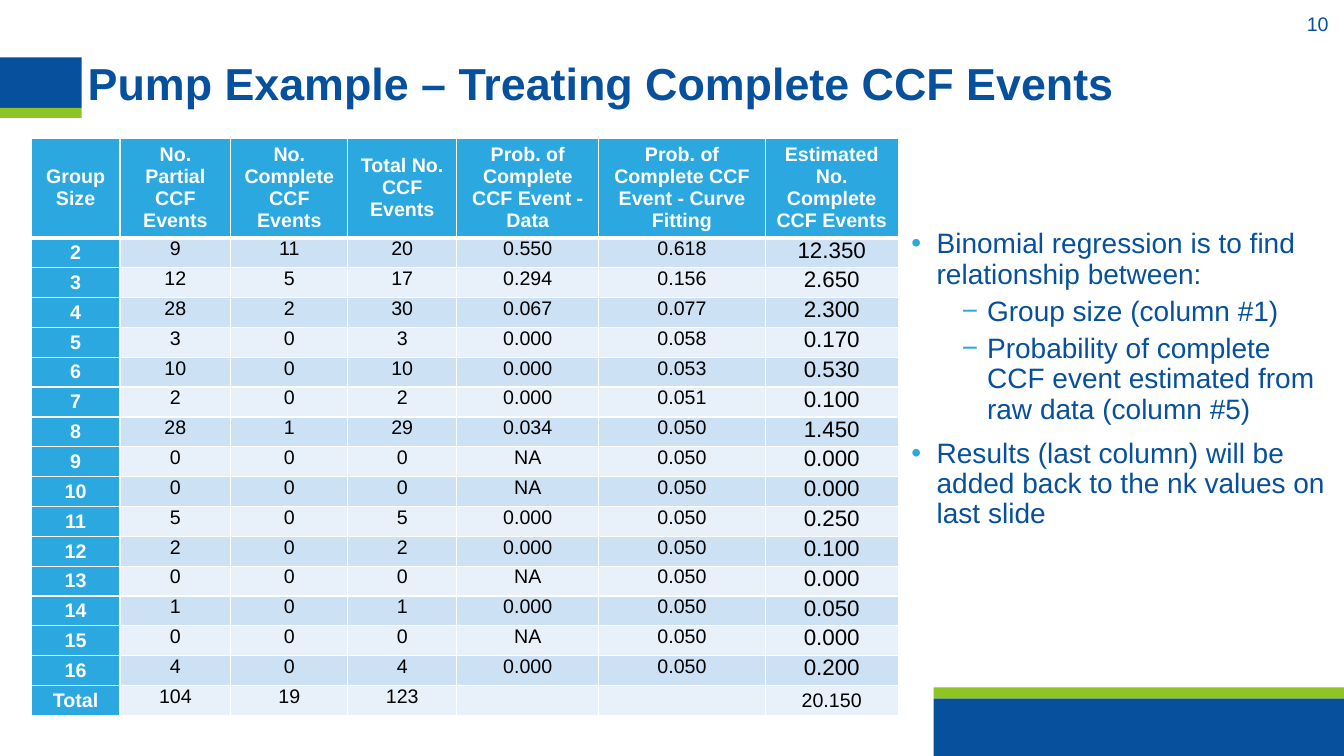
"""Build the slide on treating complete CCF events in the pump example."""
from dataclasses import dataclass

from lxml import etree
from pptx import Presentation
from pptx import util as u
from pptx.dml.color import RGBColor
from pptx.enum import shapes, text
from pptx.oxml.ns import qn


@dataclass(frozen=True)
class Theme:
    """Colours, font and type sizes of the slide."""
    navy: str = "06509D"
    green: str = "8EC423"
    sky: str = "2CA8E1"
    bands: tuple = ("CDE1F4", "E8F1F9")
    white: str = "FFFFFF"
    black: str = "000000"
    font: str = "Arial"
    title: int = 32
    bullet: int = 20
    estimate: int = 16
    small: int = 14


HEADINGS = (
    "Group Size", "No. Partial CCF Events", "No. Complete CCF Events",
    "Total No. CCF Events", "Prob. of Complete CCF Event - Data",
    "Prob. of Complete CCF Event - Curve Fitting",
    "Estimated No. Complete CCF Events",
)
EVENTS = (
    ("2", "9", "11", "20", "0.550", "0.618", "12.350"),
    ("3", "12", "5", "17", "0.294", "0.156", "2.650"),
    ("4", "28", "2", "30", "0.067", "0.077", "2.300"),
    ("5", "3", "0", "3", "0.000", "0.058", "0.170"),
    ("6", "10", "0", "10", "0.000", "0.053", "0.530"),
    ("7", "2", "0", "2", "0.000", "0.051", "0.100"),
    ("8", "28", "1", "29", "0.034", "0.050", "1.450"),
    ("9", "0", "0", "0", "NA", "0.050", "0.000"),
    ("10", "0", "0", "0", "NA", "0.050", "0.000"),
    ("11", "5", "0", "5", "0.000", "0.050", "0.250"),
    ("12", "2", "0", "2", "0.000", "0.050", "0.100"),
    ("13", "0", "0", "0", "NA", "0.050", "0.000"),
    ("14", "1", "0", "1", "0.000", "0.050", "0.050"),
    ("15", "0", "0", "0", "NA", "0.050", "0.000"),
    ("16", "4", "0", "4", "0.000", "0.050", "0.200"),
    ("Total", "104", "19", "123", "", "", "20.150"),
)
COLUMN_WIDTHS = (0.88, 1.1, 1.16, 1.08, 1.41, 1.65, 1.32)
HEADER_HEIGHT, BODY_HEIGHT = 0.99, 4.74
FINDINGS = (
    (0, "Binomial regression is to find relationship between:"),
    (1, "Group size (column #1)"),
    (1, "Probability of complete CCF event estimated from raw data (column #5)"),
    (0, "Results (last column) will be added back to the nk values on last slide"),
)
BULLET_LEVELS = (("•", 0.25, 10), ("−", 0.75, 5))


class SlideBuilder:
    """Draw styled elements on one slide."""

    def __init__(self, slide, theme):
        self.slide = slide
        self.theme = theme

    def bar(self, box, color):
        """Add a plain coloured bar."""
        bar = self.slide.shapes.add_shape(
            shapes.MSO_SHAPE.RECTANGLE, *map(u.Inches, box))
        bar.shadow.inherit = False
        bar.fill.solid()
        bar.fill.fore_color.rgb = RGBColor.from_string(color)
        bar.line.fill.background()

    def style(self, paragraph, size, color, bold=False):
        """Format the runs of a paragraph."""
        for run in paragraph.runs:
            run.font.name = self.theme.font
            run.font.size = u.Pt(size)
            run.font.bold = bold
            run.font.color.rgb = RGBColor.from_string(color)

    def frame(self, box, insets):
        """Add a wrapping text box and return its text frame."""
        frame = self.slide.shapes.add_textbox(*map(u.Inches, box)).text_frame
        frame.word_wrap = True
        (frame.margin_left, frame.margin_top,
         frame.margin_right, frame.margin_bottom) = map(u.Inches, insets)
        return frame

    def title(self, box, wording):
        """Add the slide title."""
        frame = self.frame(box, (0, 0, 0.1, 0.05))
        frame.text = wording
        frame.paragraphs[0].line_spacing = 0.9
        self.style(frame.paragraphs[0], self.theme.title, self.theme.navy, True)

    def page_number(self, box, number):
        """Add the page number."""
        frame = self.frame(box, (0.1, 0.05, 0.1, 0.17))
        frame.vertical_anchor = text.MSO_ANCHOR.MIDDLE
        frame.text = number
        frame.paragraphs[0].alignment = text.PP_ALIGN.CENTER
        self.style(frame.paragraphs[0], self.theme.small, self.theme.navy)

    def bullets(self, box, items):
        """Add a two-level bullet list."""
        frame = self.frame(box, (0, 0, 0.1, 0.05))
        frame.text = "\n".join(wording for _, wording in items)
        for index, (paragraph, (level, _)) in enumerate(zip(frame.paragraphs, items)):
            mark, indent, space = BULLET_LEVELS[level]
            paragraph.level = level
            paragraph.line_spacing = 0.9
            if index:
                paragraph.space_before = u.Pt(space)
            props = paragraph._p.get_or_add_pPr()
            props.set("marL", str(u.Inches(indent)))
            props.set("indent", str(u.Inches(-0.25)))
            color = etree.SubElement(props, qn("a:buClr"))
            etree.SubElement(color, qn("a:srgbClr"), val=self.theme.sky)
            etree.SubElement(props, qn("a:buFont"), typeface=self.theme.font)
            etree.SubElement(props, qn("a:buChar"), char=mark)
            self.style(paragraph, self.theme.bullet, self.theme.navy)

    def borders(self, cell, top, bottom):
        """Give a cell white borders."""
        props = cell._tc.get_or_add_tcPr()
        sides = (("a:lnL", 1), ("a:lnR", 1), ("a:lnT", top), ("a:lnB", bottom))
        for position, (side, width) in enumerate(sides):
            line = etree.Element(qn(side), w=str(u.Pt(width)))
            fill = etree.SubElement(line, qn("a:solidFill"))
            etree.SubElement(fill, qn("a:srgbClr"), val=self.theme.white)
            props.insert(position, line)

    def cell(self, cell, wording, fill, color, size, bold, middle):
        """Fill and format one table cell."""
        cell.fill.solid()
        cell.fill.fore_color.rgb = RGBColor.from_string(fill)
        cell.margin_left = cell.margin_right = u.Inches(0.07)
        cell.margin_top = cell.margin_bottom = 0
        cell.vertical_anchor = text.MSO_ANCHOR.MIDDLE if middle else text.MSO_ANCHOR.TOP
        cell.text_frame.text = wording
        cell.text_frame.paragraphs[0].alignment = text.PP_ALIGN.CENTER
        self.style(cell.text_frame.paragraphs[0], size, color, bold)

    def table(self, left, top, rows):
        """Add the table with a header row, a header column and banded rows."""
        theme = self.theme
        grid = self.slide.shapes.add_table(
            len(rows), len(COLUMN_WIDTHS), u.Inches(left), u.Inches(top),
            u.Inches(sum(COLUMN_WIDTHS)), u.Inches(HEADER_HEIGHT + BODY_HEIGHT)).table
        for column, width in zip(grid.columns, COLUMN_WIDTHS):
            column.width = u.Inches(width)
        last_row, last_column = len(rows) - 1, len(COLUMN_WIDTHS) - 1
        for r, row in enumerate(rows):
            grid.rows[r].height = u.Inches(
                BODY_HEIGHT / last_row if r else HEADER_HEIGHT)
            for c, wording in enumerate(row):
                heading = r == 0 or c == 0
                total = (r, c) == (last_row, last_column)
                estimate = c == last_column and 0 < r < last_row
                self.cell(
                    grid.cell(r, c), wording,
                    theme.sky if heading else theme.bands[(r - 1) % 2],
                    theme.white if heading else theme.black,
                    theme.estimate if estimate else theme.small,
                    heading, heading or total)
                self.borders(grid.cell(r, c), 3 if r == 1 else 1, 1 if r else 3)


def main():
    """Build and save the slide."""
    deck = Presentation()
    deck.slide_width, deck.slide_height = u.Inches(13.33), u.Inches(7.5)
    theme = Theme()
    page = SlideBuilder(deck.slides.add_slide(deck.slide_layouts[6]), theme)
    page.bar((9.26, 6.93, 4.07, 0.57), theme.navy)
    page.bar((9.26, 6.82, 4.07, 0.11), theme.green)
    page.bar((0, 0.57, 0.81, 0.5), theme.navy)
    page.bar((0, 1.07, 0.81, 0.1), theme.green)
    page.title((0.87, 0.61, 12.4, 1.1), "Pump Example – Treating Complete CCF Events")
    page.page_number((12.83, 0.1, 0.48, 0.4), "10")
    page.table(0.31, 1.37, (HEADINGS, *EVENTS))
    page.bullets((9.04, 2.28, 4.26, 3.16), FINDINGS)
    deck.save("out.pptx")


if __name__ == "__main__":
    main()
